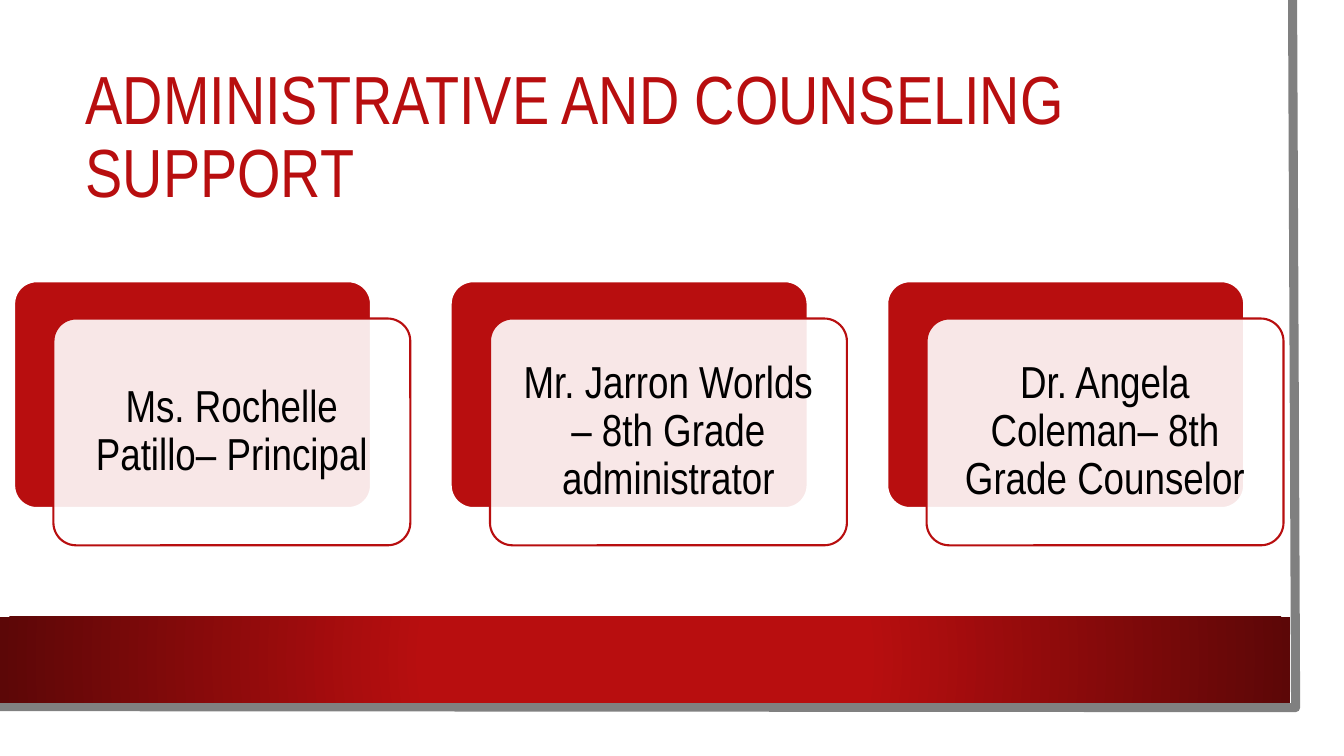
from lxml import etree
from pptx import Presentation
from pptx.dml.color import RGBColor
from pptx.enum.shapes import MSO_SHAPE as Preset
from pptx.enum.text import MSO_ANCHOR as Anchor, MSO_AUTO_SIZE as AutoSize, PP_ALIGN as Align
from pptx.oxml import parse_xml
from pptx.oxml.ns import nsdecls, qn
from pptx.util import Inches, Pt

RED, DARK_RED, WHITE, GRAY, BLACK = "B80E0F", "5C0707", "FFFFFF", "808080", "000000"
FONT = "Arial Narrow"
STAFF = [
    "Ms. Rochelle Patillo–\u00a0Principal",
    "Mr. Jarron Worlds – 8th Grade administrator",
    "Dr. Angela Coleman– 8th Grade Counselor",
]


def color(hex_code):
    return RGBColor.from_string(hex_code)


def add_block(slide, preset, left, top, width, height, fill=None, line=None):
    block = slide.shapes.add_shape(preset, *map(Inches, (left, top, width, height)))
    block.shadow.inherit = False
    if fill:
        block.fill.solid()
        block.fill.fore_color.rgb = color(fill)
    if line:
        block.line.color.rgb = color(line)
        block.line.width = Pt(1.5)
    else:
        block.line.fill.background()
    return block


def format_text(frame, text, size, hex_code, align):
    frame.word_wrap = True
    frame.auto_size = AutoSize.NONE
    frame.vertical_anchor = Anchor.MIDDLE
    frame.text = text
    paragraph = frame.paragraphs[0]
    paragraph.alignment = align
    paragraph.line_spacing = 0.9
    paragraph.font.name = FONT
    paragraph.font.size = Pt(size)
    paragraph.font.color.rgb = color(hex_code)


def add_backdrop(slide, width, height):
    """Paper sheet with a gray edge and a red band along its foot."""
    add_block(slide, Preset.RECTANGLE, 0, 0, width, height, WHITE)

    # Gray edge on the right and bottom
    right, bottom = width - 0.25, height - 0.25
    builder = slide.shapes.build_freeform(Inches(right - 0.03), 0)
    builder.add_line_segments(
        [(Inches(right), Inches(bottom)), (Inches(-0.03), Inches(bottom - 0.01))], close=False)
    edge = builder.convert_to_shape()
    edge.shadow.inherit = False
    edge.fill.background()
    edge.line.color.rgb = color(GRAY)
    edge.line.width = Pt(6.5)

    # Band shaded outward from its centre
    band = add_block(slide, Preset.RECTANGLE, 0, height - 1.15, width - 0.3, 0.85)
    band.fill.gradient()
    for stop, (position, hex_code) in zip(band.fill.gradient_stops, [(0.34, RED), (1, DARK_RED)]):
        stop.position = position
        stop.color.rgb = color(hex_code)
    linear = next(band.fill._xPr.iter(qn("a:lin")))
    linear.getparent().replace(linear, parse_xml(
        f'<a:path {nsdecls("a")} path="circle">'
        '<a:fillToRect l="50000" t="50000" r="50000" b="50000"/></a:path>'))


def add_title(slide, left, top, width, height):
    title = slide.shapes.title
    title.left, title.top, title.width, title.height = map(Inches, (left, top, width, height))
    format_text(title.text_frame, "ADMINISTRATIVE AND COUNSELING SUPPORT", 48.6, RED, Align.LEFT)


def add_staff_card(slide, left, top, width, height, text):
    """Red card with a translucent name plate set off to its lower right."""
    card = add_block(slide, Preset.ROUNDED_RECTANGLE, left, top, width, height, RED, WHITE)
    plate = add_block(slide, Preset.ROUNDED_RECTANGLE, left + 0.39, top + 0.37,
                      width, height, WHITE, RED)
    for corner_block in (card, plate):
        corner_block.adjustments[0] = 0.1
    plate_color = next(plate.fill._xPr.find(qn("a:solidFill")).iter(qn("a:srgbClr")))
    etree.SubElement(plate_color, qn("a:alpha")).set("val", "90000")

    frame = plate.text_frame
    frame.margin_left = frame.margin_right = Inches(0.13)
    frame.margin_top = frame.margin_bottom = Inches(0.13)
    format_text(frame, text, 32, BLACK, Align.CENTER)


def add_staff_row(slide, left, top, pitch):
    for index, person in enumerate(STAFF):
        add_staff_card(slide, left + index * pitch, top, 3.54, 2.25, person)


def main():
    deck = Presentation()
    deck.slide_width, deck.slide_height = Inches(13.33), Inches(7.5)
    slide = deck.slides.add_slide(deck.slide_layouts[5])
    add_backdrop(slide, 13.1, 7.27)
    add_title(slide, 0.75, 0.75, 11.37, 1.26)
    # Bring the title in front of the backdrop
    slide.shapes._spTree.append(slide.shapes.title._element)
    add_staff_row(slide, 0.14, 2.79, 4.33)
    deck.save("out.pptx")


if __name__ == "__main__":
    main()
